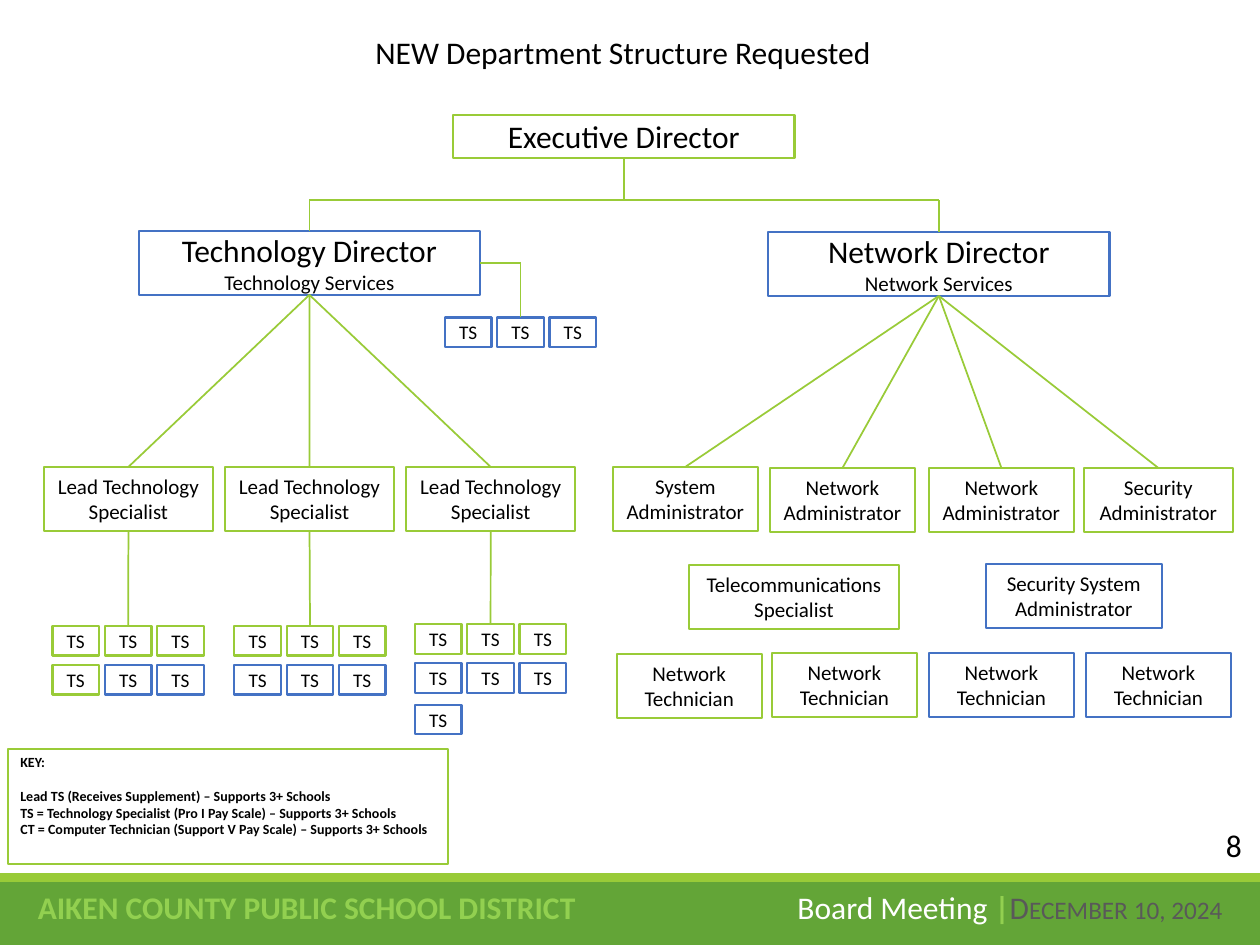
from dataclasses import dataclass
from itertools import pairwise

from lxml.etree import SubElement
from pptx import Presentation
from pptx.dml.color import RGBColor
from pptx.enum.shapes import MSO_CONNECTOR, MSO_SHAPE
from pptx.enum.text import MSO_ANCHOR, MSO_AUTO_SIZE, PP_ALIGN
from pptx.oxml.ns import qn
from pptx.util import Pt

COLORS = {
    "green": "99CB38", "blue": "4472C4", "band": "63A537", "white": "FFFFFF",
    "black": "000000", "lime": "92D050", "gray": "595959",
}
FONT = "Calibri"
BOTTOM, RIGHT, TOP = 2, 3, 0
ROLE_HEIGHT = 36.6
BUS_Y = 114.4


@dataclass(frozen=True)
class Role:
    left: float
    top: float
    width: float
    lines: tuple[str, ...]
    color: str = "green"
    height: float = ROLE_HEIGHT
    sizes: tuple[float, ...] = (12, 12)


@dataclass(frozen=True)
class Team:
    """A grid of TS boxes; each row has one letter per box, g(reen) or b(lue)."""
    left: float
    top: float
    rows: tuple[str, ...]


@dataclass(frozen=True)
class Span:
    text: str
    color: str
    bold: bool = False
    small_caps: bool = False


EXECUTIVE = Role(259, 65.7, 195, ("Executive Director",), height=24.5, sizes=(18,))
TECHNOLOGY = Role(79.3, 131.9, 195, ("Technology Director", "Technology Services"),
                  "blue", sizes=(18, 12))
NETWORK = Role(439, 132.5, 195, ("Network Director", "Network Services"),
               "blue", sizes=(18, 12))
LEADS = [Role(25.1 + 103.5 * i, 266.8, 96.6, ("Lead Technology Specialist",))
         for i in range(3)]
ADMINISTRATORS = [
    Role(350.2, 266.8, 82.9, ("System", "Administrator")),
    Role(440, 267.4, 82.9, ("Network", "Administrator")),
    Role(530.8, 267.4, 82.9, ("Network", "Administrator")),
    Role(619.4, 267.4, 85, ("Security", "Administrator")),
]
SUPPORT = [
    Role(393.7, 322.8, 120, ("Telecommunications", "Specialist")),
    Role(563.3, 322.2, 100.7, ("Security System", "Administrator"), "blue"),
]
TECHNICIANS = [
    Role(left, top, 82.9, ("Network", "Technician"), color)
    for left, top, color in (
        (352.4, 373.5, "green"), (441.1, 373, "green"),
        (530.8, 373, "blue"), (620.5, 373, "blue"))
]
DIRECT_TEAM = Team(254.2, 181.4, ("bbb",))
LEAD_TEAMS = [
    Team(30, 357.8, ("ggg", "gbb")),
    Team(133.9, 357.8, ("ggg", "bbb")),
    Team(237.1, 356.7, ("ggg", "bbb", "b")),
]
KEY_LINES = (
    "KEY:",
    "Lead TS (Receives Supplement) – Supports 3+ Schools",
    "TS = Technology Specialist (Pro I Pay Scale) – Supports 3+ Schools",
    "CT = Computer Technician (Support V Pay Scale) – Supports 3+ Schools",
)


def rgb(name: str) -> RGBColor:
    return RGBColor.from_string(COLORS[name])


def add_rect(slide, left, top, width, height, fill="white", outline=None):
    rect = slide.shapes.add_shape(MSO_SHAPE.RECTANGLE, Pt(left), Pt(top),
                                  Pt(width), Pt(height))
    rect.shadow.inherit = False
    rect.fill.solid()
    rect.fill.fore_color.rgb = rgb(fill)
    if outline:
        rect.line.color.rgb = rgb(outline)
        rect.line.width = Pt(1.25)
    else:
        rect.line.fill.background()
    return rect


def write_lines(frame, lines, sizes, align=PP_ALIGN.CENTER, bold=False) -> None:
    for i, (text, size) in enumerate(zip(lines, sizes)):
        paragraph = frame.paragraphs[0] if i == 0 else frame.add_paragraph()
        paragraph.text = text
        paragraph.alignment = align
        paragraph.font.name = FONT
        paragraph.font.size = Pt(size)
        paragraph.font.bold = bold
        paragraph.font.color.rgb = rgb("black")


def add_role(slide, role: Role):
    box = add_rect(slide, role.left, role.top, role.width, role.height,
                   outline=role.color)
    box.text_frame.word_wrap = True
    box.text_frame.vertical_anchor = MSO_ANCHOR.MIDDLE
    write_lines(box.text_frame, role.lines, role.sizes)
    return box


def add_team(slide, team: Team):
    """Draw the grid and return the middle box of its first row."""
    boxes = [
        add_role(slide, Role(team.left + 29.9 * column, team.top + offset, 26.7, ("TS",),
                             {"g": "green", "b": "blue"}[letter], 16.8, (11,)))
        for offset, row in zip((0, 22.3, 46.1), team.rows)
        for column, letter in enumerate(row)
    ]
    return boxes[1]


def site(box, side: int) -> tuple[int, int]:
    middle_x, middle_y = box.left + box.width // 2, box.top + box.height // 2
    return {TOP: (middle_x, box.top), BOTTOM: (middle_x, box.top + box.height),
            RIGHT: (box.left + box.width, middle_y)}[side]


def add_route(slide, points, start=None, end=None) -> None:
    """Draw straight lines through points; start and end are (box, side) joints."""
    segments = list(pairwise(points))
    for i, (first, last) in enumerate(segments):
        line = slide.shapes.add_connector(MSO_CONNECTOR.STRAIGHT, *first, *last)
        line.line.color.rgb = rgb("green")
        line.line.width = Pt(1)
        SubElement(line._element.spPr, qn("a:effectLst"))
        if start and i == 0:
            line.begin_connect(*start)
        if end and i == len(segments) - 1:
            line.end_connect(*end)


def link_down(slide, parent, child) -> None:
    add_route(slide, [site(parent, BOTTOM), site(child, TOP)],
              (parent, BOTTOM), (child, TOP))


def add_label(slide, left, top, width, spans, align=PP_ALIGN.LEFT, wrap=True) -> None:
    label = slide.shapes.add_textbox(Pt(left), Pt(top), Pt(width), Pt(28.8))
    frame = label.text_frame
    frame.word_wrap = wrap
    frame.auto_size = MSO_AUTO_SIZE.SHAPE_TO_FIT_TEXT
    paragraph = frame.paragraphs[0]
    paragraph.alignment = align
    paragraph.font.name = FONT
    paragraph.font.size = Pt(18)
    for span in spans:
        run = paragraph.add_run()
        run.text = span.text
        run.font.bold = span.bold
        run.font.color.rgb = rgb(span.color)
        if span.small_caps:
            run.font._element.set("cap", "small")


def add_key(slide) -> None:
    key = add_rect(slide, 4.5, 427.9, 251.4, 65.7, outline="green")
    frame = key.text_frame
    frame.word_wrap = True
    frame.vertical_anchor = MSO_ANCHOR.MIDDLE
    frame.margin_bottom = Pt(15.8)
    write_lines(frame, KEY_LINES, [8] * len(KEY_LINES), PP_ALIGN.LEFT, bold=True)
    frame.paragraphs[1].space_before = Pt(9.8)


def add_chart_of_roles(slide) -> None:
    executive, technology, network = (
        add_role(slide, role) for role in (EXECUTIVE, TECHNOLOGY, NETWORK))
    hub = (site(executive, BOTTOM)[0], Pt(BUS_Y))
    add_route(slide, [site(executive, BOTTOM), hub], (executive, BOTTOM))
    for director in (technology, network):
        top = site(director, TOP)
        add_route(slide, [hub, (top[0], hub[1]), top], end=(director, TOP))

    for role, team in zip(LEADS, LEAD_TEAMS):
        lead = add_role(slide, role)
        link_down(slide, technology, lead)
        link_down(slide, lead, add_team(slide, team))
    for role in ADMINISTRATORS:
        link_down(slide, network, add_role(slide, role))
    for role in SUPPORT + TECHNICIANS:
        add_role(slide, role)

    specialist = add_team(slide, DIRECT_TEAM)
    side, top = site(technology, RIGHT), site(specialist, TOP)
    add_route(slide, [side, (top[0], side[1]), top],
              (technology, RIGHT), (specialist, TOP))


def main() -> None:
    deck = Presentation()
    deck.slide_width, deck.slide_height = Pt(720), Pt(540)
    slide = deck.slides.add_slide(deck.slide_layouts[6])
    add_rect(slide, 0, 504, 720, 36, "band")
    add_rect(slide, 0, 499, 720, 5, "green")
    add_chart_of_roles(slide)
    add_key(slide)
    add_label(slide, 207.4, 15.1, 301,
              [Span("NEW Department Structure Requested", "black")], wrap=False)
    add_label(slide, 14.5, 504, 360,
              [Span("AIKEN COUNTY PUBLIC SCHOOL DISTRICT", "lime", bold=True)])
    add_label(slide, 405.6, 504, 300, [
        Span("Board Meeting ", "white"), Span("|", "lime", bold=True),
        Span("December 10, 2024", "gray", small_caps=True)], PP_ALIGN.RIGHT)
    add_label(slide, 693.4, 468.7, 26.6, [Span("8", "black")])
    deck.save("out.pptx")


if __name__ == "__main__":
    main()
